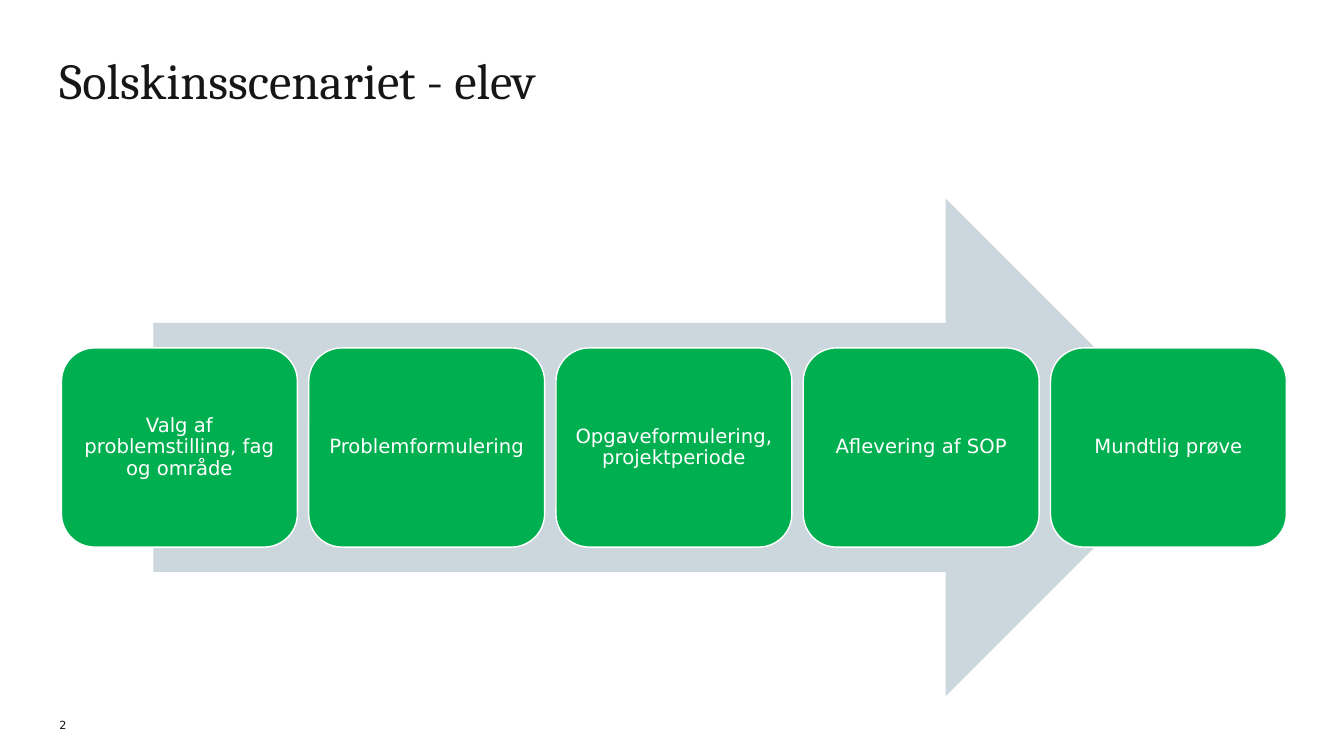
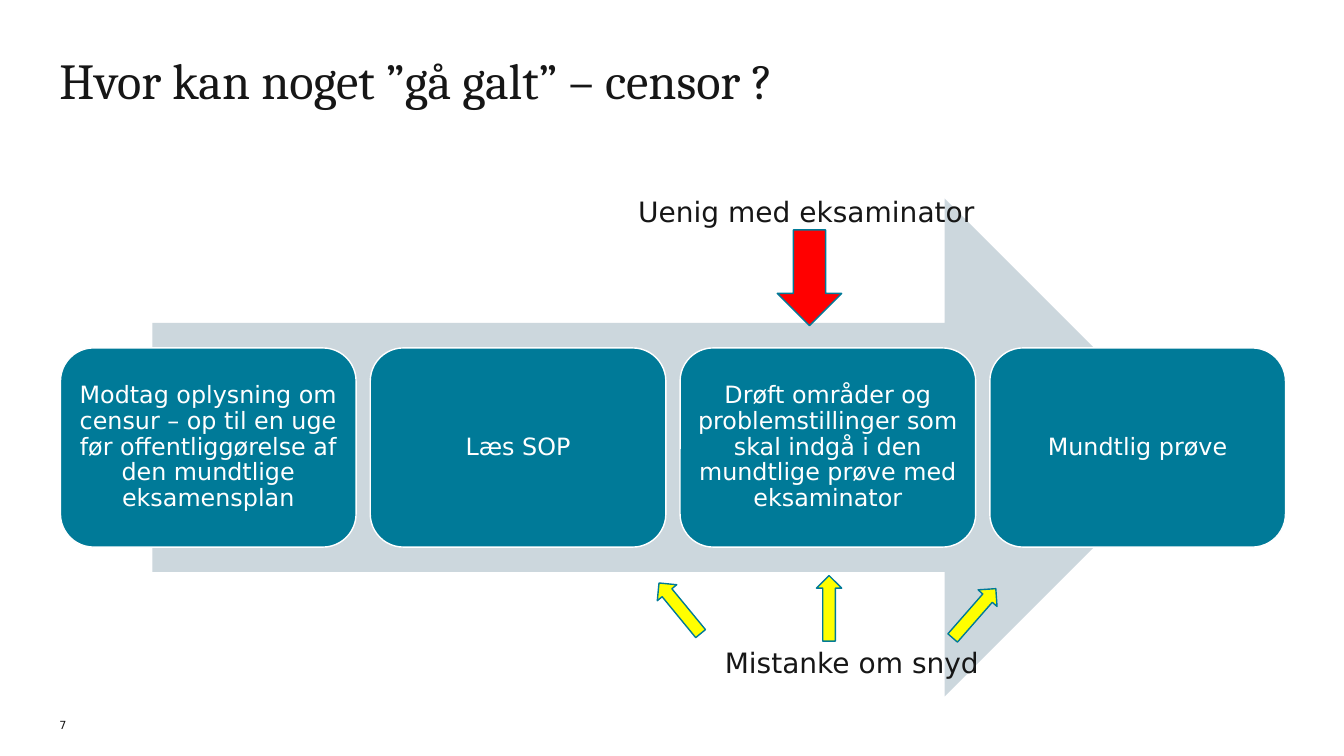
from collections import namedtuple

from pptx import Presentation
from pptx.dml.color import RGBColor
from pptx.enum.shapes import MSO_SHAPE
from pptx.enum.text import MSO_ANCHOR, MSO_AUTO_SIZE, PP_ALIGN
from pptx.util import Pt

Box = namedtuple("Box", "left top width height")

ROUNDED = MSO_SHAPE.ROUNDED_RECTANGLE
RIGHT_ARROW = MSO_SHAPE.RIGHT_ARROW
DOWN_ARROW = MSO_SHAPE.DOWN_ARROW
UP_ARROW = MSO_SHAPE.UP_ARROW
LEFT, CENTER = PP_ALIGN.LEFT, PP_ALIGN.CENTER
TOP, MIDDLE, BOTTOM = MSO_ANCHOR.TOP, MSO_ANCHOR.MIDDLE, MSO_ANCHOR.BOTTOM
NO_FIT = MSO_AUTO_SIZE.NONE

TITLE_FONT, BODY_FONT = "Cambria", "DejaVu Sans"
INK, WHITE, PALE = "161616", "FFFFFF", "CCD7DD"
GREEN, TEAL, RED, YELLOW = "00B050", "007A98", "FF0000", "FFFF00"

TITLE_BOX = Box(42.5, 42.5, 729.4, 73.4)
NUMBER_BOX = Box(42.5, 508.3, 21.6, 14.4)
STUDENT_BOX = Box(43.9, 141.8, 875, 355.7)
EXAMINER_BOX = Box(43.2, 141.8, 875, 355.7)
ARROW_SHARE, CARD_SHARE, GAP_SHARE = 0.85, 0.4, 0.048

STUDENT_STEPS = [
    "Valg af problemstilling, fag og område",
    "Problemformulering",
    "Opgaveformulering, projektperiode",
    "Aflevering af SOP",
    "Mundtlig prøve",
]
EXAMINER_STEPS = [
    "Modtag oplysning om censur – op til en uge før offentliggørelse af den mundtlige eksamensplan",
    "Læs SOP",
    "Drøft områder og problemstillinger som skal indgå i den mundtlige prøve med eksaminator",
    "Mundtlig prøve",
]
WARNING_ARROWS = [
    (DOWN_ARROW, Box(512, 22.4, 46, 68.4), RED, 0),
    (UP_ARROW, Box(433.4, 269.3, 18, 46.8), YELLOW, 320.6),
    (UP_ARROW, Box(540, 269.3, 18, 46.8), YELLOW, 0),
    (UP_ARROW, Box(643.7, 272.9, 18, 46.8), YELLOW, 41.2),
]
WARNING_LABELS = [
    ("Uenig med eksaminator", Box(412.6, -2.8, 244, 24.5)),
    ("Mistanke om snyd", Box(474.5, 319, 186.5, 24.5)),
]


def color(value):
    """Turn a hex string into a colour."""
    return RGBColor.from_string(value)


def points(box):
    """Turn a box into four lengths."""
    return [Pt(round(length, 2)) for length in box]


def inside(outer, box):
    """Shift a box from the corner of its outer box."""
    return box._replace(left=outer.left + box.left, top=outer.top + box.top)


def write(shape, text, size, ink=INK, font=BODY_FONT, align=LEFT,
          anchor=TOP, inset=0, spacing=1.0, wrap=True):
    """Fill a shape with one formatted paragraph."""
    frame = shape.text_frame
    frame.auto_size = NO_FIT
    frame.word_wrap = wrap
    frame.vertical_anchor = anchor
    frame.margin_left = frame.margin_right = Pt(inset)
    frame.margin_top = frame.margin_bottom = Pt(inset)
    para = frame.paragraphs[0]
    para.alignment = align
    para.line_spacing = spacing
    span = para.add_run()
    span.text = text
    span.font.name = font
    span.font.size = Pt(size)
    span.font.color.rgb = color(ink)


def add_shape(page, kind, box, fill, line=None):
    """Add a flat preset shape, outlined if a line colour is given."""
    shape = page.shapes.add_shape(kind, *points(box))
    shape.shadow.inherit = False
    shape.fill.solid()
    shape.fill.fore_color.rgb = color(fill)
    if line:
        shape.line.color.rgb = color(line)
        shape.line.width = Pt(1)
    else:
        shape.line.fill.background()
    return shape


def add_page(deck, title, number):
    """Add a slide with its title and page number."""
    page = deck.slides.add_slide(deck.slide_layouts.get_by_name("Title Only"))
    heading = page.shapes.title
    heading.left, heading.top, heading.width, heading.height = points(TITLE_BOX)
    write(heading, title, 36, font=TITLE_FONT, spacing=0.83)
    write(page.shapes.add_textbox(*points(NUMBER_BOX)), number, 8, anchor=BOTTOM)
    return page


def add_process(page, box, steps, fill, size):
    """Draw equal step cards across a wide arrow in the box."""
    arrow_width = box.width * ARROW_SHARE
    arrow_left = box.left + (box.width - arrow_width) / 2
    add_shape(page, RIGHT_ARROW, box._replace(left=arrow_left, width=arrow_width), PALE)
    width = box.width / (len(steps) + (len(steps) - 1) * GAP_SHARE)
    height = box.height * CARD_SHARE
    top = box.top + (box.height - height) / 2
    for index, step in enumerate(steps):
        left = box.left + index * width * (1 + GAP_SHARE)
        card = add_shape(page, ROUNDED, Box(left, top, width, height), fill, WHITE)
        write(card, step, size, ink=WHITE, align=CENTER, anchor=MIDDLE,
              inset=size * 0.3, spacing=0.9)


def add_warnings(page, box):
    """Place the warning arrows and their labels around the process."""
    for kind, place, fill, angle in WARNING_ARROWS:
        add_shape(page, kind, inside(box, place), fill, TEAL).rotation = angle
    for text, place in WARNING_LABELS:
        label = page.shapes.add_textbox(*points(inside(box, place)))
        write(label, text, 20, wrap=False)


def main():
    """Build and save the deck."""
    deck = Presentation()
    deck.slide_width, deck.slide_height = Pt(960), Pt(540)

    page = add_page(deck, "Solskinsscenariet - elev", "2")
    add_process(page, STUDENT_BOX, STUDENT_STEPS, GREEN, 14)

    page = add_page(deck, "Hvor kan noget ”gå galt” – censor ?", "7")
    add_process(page, EXAMINER_BOX, EXAMINER_STEPS, TEAL, 17)
    add_warnings(page, EXAMINER_BOX)

    deck.save("out.pptx")


if __name__ == "__main__":
    main()
